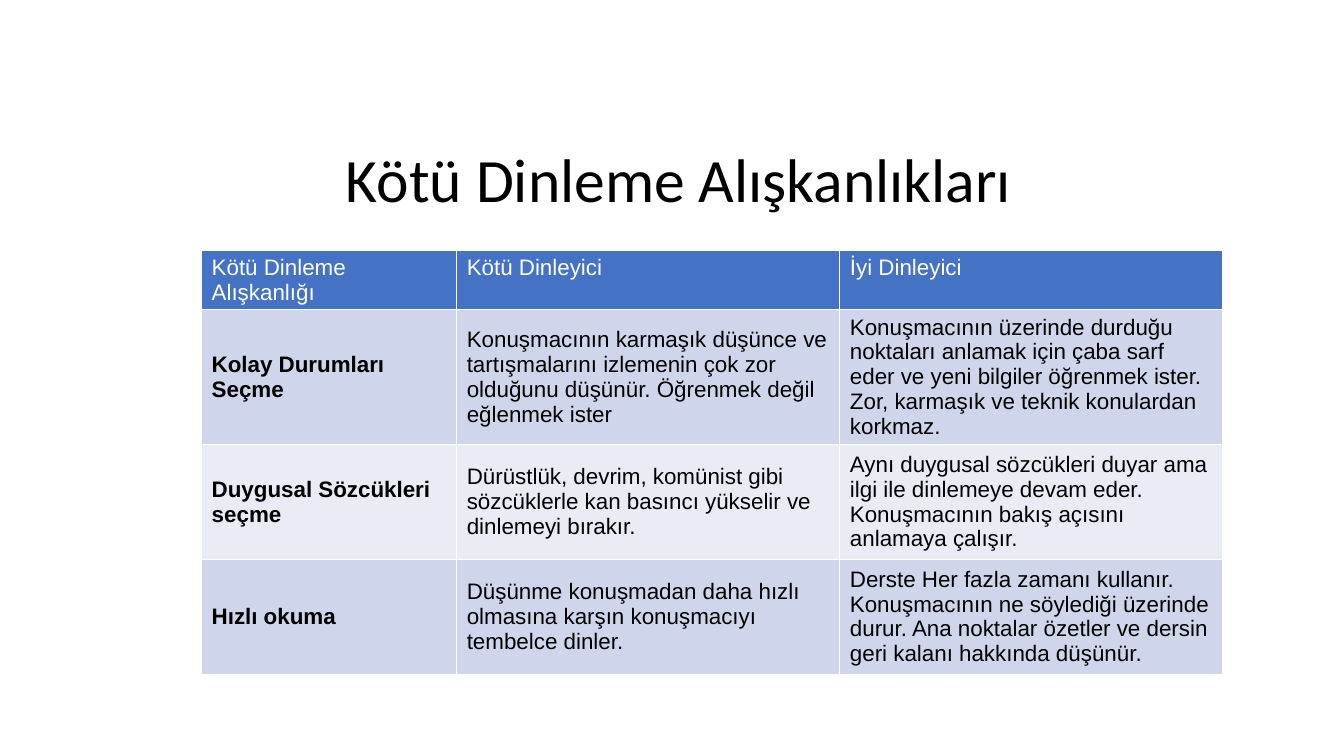
"""Build a slide with a table of bad listening habits."""
from pptx import Presentation
from pptx.dml.color import RGBColor as Rgb
from pptx.enum.text import MSO_ANCHOR as Anchor, MSO_AUTO_SIZE as Fit, PP_ALIGN as Align
from pptx.util import Inches, Pt

HUES = {"head": "4472C4", "odd": "CFD5EA", "even": "E9EBF5", "ink": "000000", "pale": "FFFFFF"}
ROWS = [
    ("Kötü Dinleme Alışkanlığı", "Kötü Dinleyici", "İyi Dinleyici"),
    ("Kolay Durumları Seçme",
     "Konuşmacının karmaşık düşünce ve tartışmalarını izlemenin çok zor olduğunu düşünür. "
     "Öğrenmek değil eğlenmek ister",
     "Konuşmacının üzerinde durduğu noktaları anlamak için çaba sarf eder ve yeni bilgiler "
     "öğrenmek ister. Zor, karmaşık ve teknik konulardan korkmaz."),
    ("Duygusal Sözcükleri seçme",
     "Dürüstlük, devrim, komünist gibi sözcüklerle kan basıncı yükselir ve dinlemeyi bırakır.",
     "Aynı duygusal sözcükleri duyar ama ilgi ile dinlemeye devam eder. "
     "Konuşmacının bakış açısını anlamaya çalışır."),
    ("Hızlı okuma",
     "Düşünme konuşmadan daha hızlı olmasına karşın konuşmacıyı tembelce dinler.",
     "Derste Her fazla zamanı kullanır. Konuşmacının ne söylediği üzerinde durur. "
     "Ana noktalar özetler ve dersin geri kalanı hakkında düşünür."),
]
WIDTHS = [2.53, 3.8, 3.8]
HEIGHTS = [0.46] + [1.14] * 3


def style(part, hue, **form):
    """Set the font of a paragraph from format values."""
    for key, value in form.items():
        setattr(part.font, key, value)
    part.font.color.rgb = Rgb.from_string(HUES[hue])


deck = Presentation()
deck.slide_width, deck.slide_height = Inches(13.33), Inches(7.5)
slide = deck.slides.add_slide(deck.slide_layouts[5])

title = slide.shapes.title
box = {"left": 3.33, "top": 1.31, "width": 8.5, "height": 1.01}
for key, value in box.items():
    setattr(title, key, Inches(value))
frame = title.text_frame
frame.text = "Kötü Dinleme Alışkanlıkları"
frame.auto_size = Fit.NONE
frame.vertical_anchor = Anchor.MIDDLE
head = frame.paragraphs[0]
head.alignment = Align.LEFT
head.line_spacing = 0.9
style(head, "ink", name="Calibri", size=Pt(44))

table = slide.shapes.add_table(
    len(ROWS), len(WIDTHS), Inches(2), Inches(2.48),
    Inches(sum(WIDTHS)), Inches(sum(HEIGHTS))).table
for col, width in zip(table.columns, WIDTHS):
    col.width = Inches(width)
for i, (row, height, texts) in enumerate(zip(table.rows, HEIGHTS, ROWS)):
    row.height = Inches(height)
    band = "head" if i == 0 else "odd" if i % 2 else "even"
    for j, (cell, text) in enumerate(zip(row.cells, texts)):
        cell.text = text
        cell.fill.solid()
        cell.fill.fore_color.rgb = Rgb.from_string(HUES[band])
        cell.vertical_anchor = Anchor.MIDDLE if i else Anchor.TOP
        style(cell.text_frame.paragraphs[0], "ink" if i else "pale",
              name="Arial", size=Pt(16), bold=i > 0 and j == 0)

deck.save("out.pptx")
